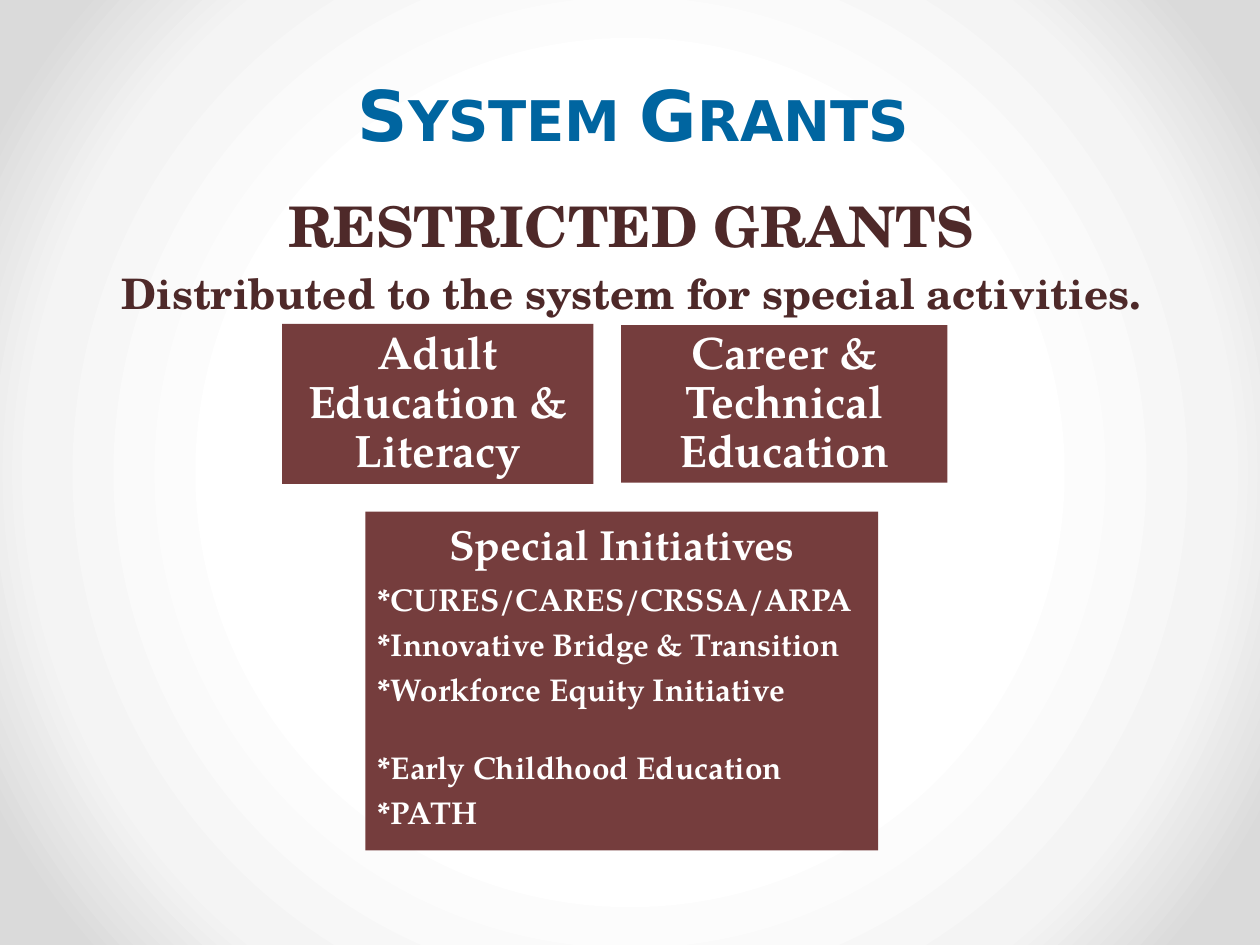
import pptx
import pptx.util
import pptx.dml.color
import pptx.enum.shapes
import pptx.enum.text
import pptx.oxml
import pptx.oxml.ns

Inches, Pt = pptx.util.Inches, pptx.util.Pt
ALIGN = pptx.enum.text.PP_ALIGN
ANCHOR = pptx.enum.text.MSO_ANCHOR
RECT = pptx.enum.shapes.MSO_SHAPE.RECTANGLE

STOPS = [(50, "FFFFFF"), (76, "F4F4F4"), (92, "DADADA")]
FILL = "753D3D"
SIDES = ("left", "top", "right", "bottom")

TITLE = dict(name="DejaVu Sans", size=40, color="0065A0")
HEAD = dict(name="TeX Gyre Schola", size=32, color="4E2929")
SUB = dict(HEAD, size=24)
CARD = dict(name="TeX Gyre Pagella", size=26, color="FFFFFF")
TOPIC = dict(CARD, size=24)
ITEM = dict(CARD, size=18)

MID = dict(alignment=ALIGN.CENTER)
TIGHT = dict(MID, line_spacing=0.9)
LEFT = dict(alignment=ALIGN.LEFT, line_spacing=0.9, space_after=Pt(6.3))
GAP = dict(LEFT, space_before=Pt(19))

HEADS = [
    ((0.53, 0.29, 8.99, 0.99), ANCHOR.BOTTOM,
     [("System Grants", TITLE, dict(MID, line_spacing=Pt(58)))]),
    ((0.5, 1.47, 9.02, 1.28), ANCHOR.TOP,
     [("RESTRICTED GRANTS", HEAD, MID),
      ("Distributed to the system for special activities.", SUB,
       dict(MID, space_before=Pt(4.8)))]),
]
CARDS = [
    ((2.24, 2.57, 2.47, 1.27), ANCHOR.MIDDLE, 0.11,
     [("Adult Education & Literacy", CARD, TIGHT)]),
    ((4.93, 2.58, 2.59, 1.25), ANCHOR.MIDDLE, 0.11,
     [("Career & Technical Education", CARD, TIGHT)]),
    ((2.9, 4.06, 4.07, 2.69), ANCHOR.TOP, 0.1,
     [("Special Initiatives", TOPIC, dict(TIGHT, space_after=Pt(8.4))),
      ("*CURES/CARES/CRSSA/ARPA", ITEM, LEFT),
      ("*Innovative Bridge & Transition", ITEM, LEFT),
      ("*Workforce Equity Initiative", ITEM, LEFT),
      ("*Early Childhood Education", ITEM, GAP),
      ("*PATH", ITEM, LEFT)]),
]


def paint(code):
    return pptx.dml.color.RGBColor.from_string(code)


def assign(item, values):
    for key, value in values.items():
        setattr(item, key, value)


def write(shape, anchor, lines):
    frame = shape.text_frame
    assign(frame, dict(word_wrap=True, vertical_anchor=anchor))
    for num, (text, face, form) in enumerate(lines):
        para = frame.add_paragraph() if num else frame.paragraphs[0]
        assign(para, form)
        run = para.add_run()
        run.text = text
        assign(run.font, dict(name=face["name"], size=Pt(face["size"]), bold=True))
        run.font.color.rgb = paint(face["color"])
        if face is TITLE:
            run.font._element.set("cap", "small")


def shade(slide):
    fill = slide.background.fill
    fill.solid()
    fill.fore_color.rgb = paint(STOPS[0][1])
    solid = slide.element.find(".//" + pptx.oxml.ns.qn("p:bgPr"))[0]
    stops = "".join(
        f'<a:gs pos="{pos * 1000}"><a:srgbClr val="{code}"/></a:gs>'
        for pos, code in STOPS)
    grad = pptx.oxml.parse_xml(
        f'<a:gradFill {pptx.oxml.ns.nsdecls("a")} rotWithShape="1">'
        f'<a:gsLst>{stops}</a:gsLst><a:path path="circle">'
        '<a:fillToRect l="50000" t="50000" r="50000" b="50000"/>'
        '</a:path></a:gradFill>')
    solid.getparent().replace(solid, grad)


def main():
    deck = pptx.Presentation()
    assign(deck, dict(slide_width=Inches(10), slide_height=Inches(7.5)))
    slide = deck.slides.add_slide(deck.slide_layouts[6])
    shade(slide)
    for place, anchor, lines in HEADS:
        write(slide.shapes.add_textbox(*map(Inches, place)), anchor, lines)
    for place, anchor, inset, lines in CARDS:
        card = slide.shapes.add_shape(RECT, *map(Inches, place))
        card.shadow.inherit = False
        card.fill.solid()
        card.fill.fore_color.rgb = paint(FILL)
        card.line.fill.background()
        assign(card.text_frame, {"margin_" + side: Inches(inset) for side in SIDES})
        write(card, anchor, lines)
    deck.save("out.pptx")


if __name__ == "__main__":
    main()
